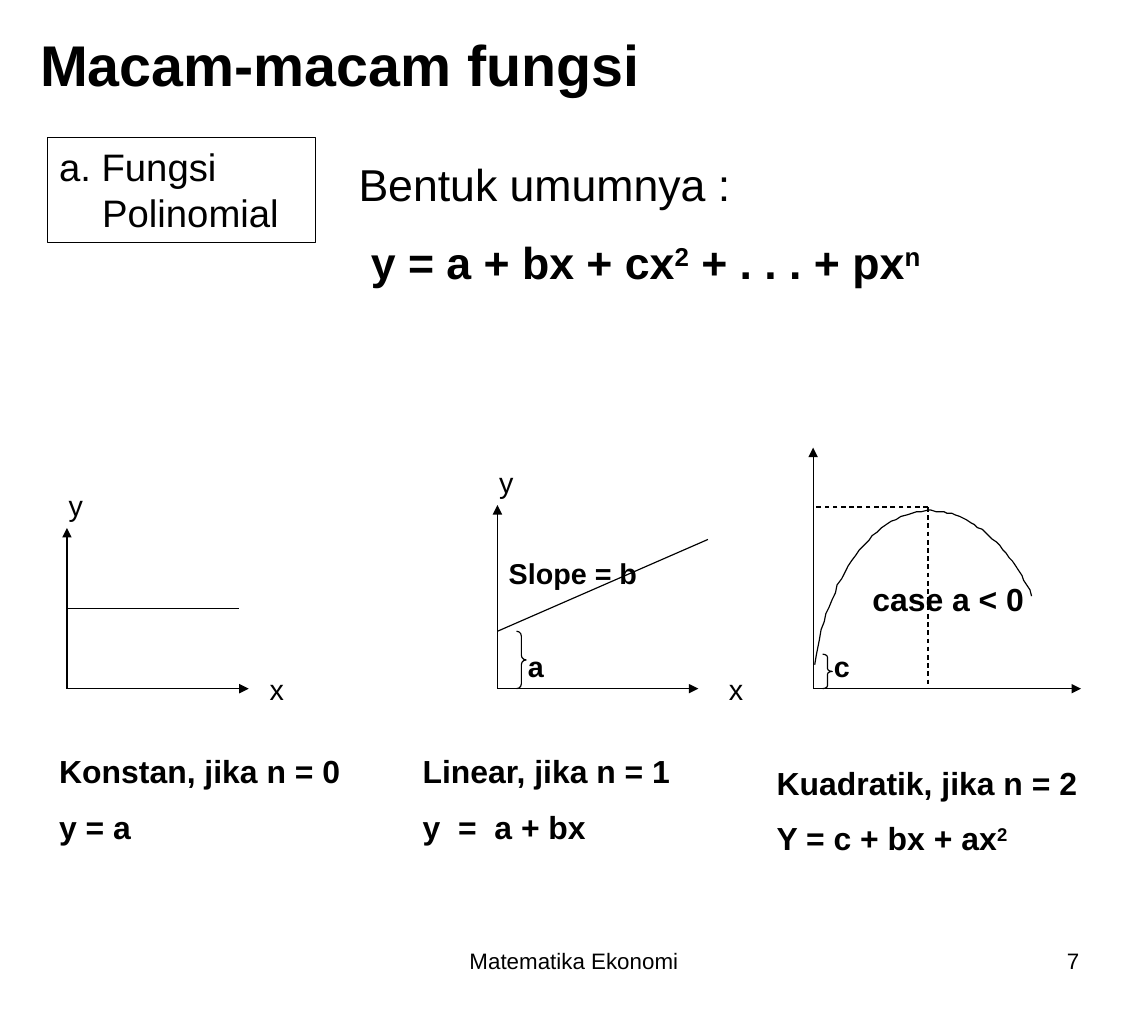
from lxml.etree import SubElement
from pptx import Presentation
from pptx.dml.color import RGBColor
from pptx.enum.dml import MSO_LINE_DASH_STYLE as Dash
from pptx.enum.shapes import MSO_CONNECTOR as Connector, MSO_SHAPE as Shape
from pptx.enum.text import MSO_ANCHOR as Anchor, MSO_AUTO_SIZE as AutoSize, PP_ALIGN as Align
from pptx.oxml.ns import qn
from pptx.util import Pt

BLACK = RGBColor(0, 0, 0)
FONT = "Arial"
BASELINE = 432
SUPERSCRIPT = "30000"


def write_text(box, paragraphs, size, bold=False, align=Align.LEFT, anchor=Anchor.TOP):
    """Fill a shape with paragraphs, in which ^ starts a one-letter superscript."""
    frame = box.text_frame
    settings = {"word_wrap": True, "auto_size": AutoSize.NONE, "vertical_anchor": anchor}
    for name, value in settings.items():
        setattr(frame, name, value)
    for index, text in enumerate(paragraphs):
        para = frame.add_paragraph() if index else frame.paragraphs[0]
        para.alignment = align
        para.space_before = Pt(round(0.55 * size, 1) if index else 0)
        first, *raised = text.split("^")
        pieces = [(first, False)]
        for part in raised:
            pieces += [(part[0], True), (part[1:], False)]
        for piece, is_raised in pieces:
            if piece:
                add_span(para, piece, size, bold, is_raised)


def add_span(para, text, size, bold, is_raised):
    """Add one run of formatted text to a paragraph."""
    span = para.add_run()
    span.text = text
    for name, value in {"name": FONT, "size": Pt(size), "bold": bold}.items():
        setattr(span.font, name, value)
    span.font.color.rgb = BLACK
    if is_raised:
        span.font._element.set("baseline", SUPERSCRIPT)


def add_label(slide, left, top, width, height, paragraphs, size, **style):
    """Add a text box and return it."""
    box = slide.shapes.add_textbox(Pt(left), Pt(top), Pt(width), Pt(height))
    write_text(box, paragraphs, size, **style)
    return box


def indent(para, left, first=0):
    """Set the left margin and first-line indent of a paragraph."""
    properties = para._p.get_or_add_pPr()
    properties.set("marL", str(Pt(left)))
    properties.set("indent", str(Pt(first)))


def outline(shape):
    """Give a shape a thin black outline without fill or shadow."""
    shape.shadow.inherit = False
    shape.fill.background()
    shape.line.color.rgb = BLACK
    shape.line.width = Pt(0.75)


def add_line(slide, start, end, arrow=False, dashed=False):
    """Draw a thin straight line, optionally dashed or with an arrowhead."""
    line = slide.shapes.add_connector(Connector.STRAIGHT, *map(Pt, start + end))
    line.line.color.rgb = BLACK
    line.line.width = Pt(0.75)
    if dashed:
        line.line.dash_style = Dash.DASH
    if arrow:
        SubElement(line.line._ln, qn("a:tailEnd"), type="triangle")
    SubElement(line._element.spPr, qn("a:effectLst"))


def add_axes(slide, left, height, width):
    """Draw a pair of arrows that meet on the common baseline."""
    origin = (left, BASELINE)
    add_line(slide, origin, (left, BASELINE - height), arrow=True)
    add_line(slide, origin, (left + width, BASELINE), arrow=True)


def add_axis_names(slide, left, height, x_left):
    """Name the y axis above its arrow and the x axis beside its arrow."""
    add_label(slide, left - 6, BASELINE - height - 29, 32, 29, ["y"], 18)
    add_label(slide, x_left, BASELINE - 14.4, 32, 29, ["x"], 18)


def add_brace(slide, left, height, adjustment):
    """Draw a right brace that stands on the baseline."""
    brace = slide.shapes.add_shape(
        Shape.RIGHT_BRACE, Pt(left), Pt(BASELINE - height), Pt(6), Pt(height))
    brace.adjustments[0] = adjustment
    outline(brace)


def bezier_points(start, control_1, control_2, end, steps=30):
    """Return evenly stepped points along a cubic curve."""
    points = []
    for step in range(steps + 1):
        t = step / steps
        weights = ((1 - t) ** 3, 3 * t * (1 - t) ** 2, 3 * t * t * (1 - t), t ** 3)
        corners = (start, control_1, control_2, end)
        points.append(tuple(
            sum(w * corner[axis] for w, corner in zip(weights, corners)) for axis in (0, 1)))
    return points


def add_parabola(slide):
    """Draw the downward-opening curve as an open outline."""
    peak = (581.8, 320.4)
    points = bezier_points((647.3, 373.7), (631.4, 339.8), (607, 319.7), peak)
    points += bezier_points(peak, (547.9, 321.8), (519.1, 360.7), (511.2, 416.9))[1:]
    builder = slide.shapes.build_freeform(*points[0], scale=Pt(1))
    builder.add_line_segments(points[1:], close=False)
    outline(builder.convert_to_shape())


def add_heading(slide):
    """Write the title, the boxed topic and the general form."""
    title = slide.shapes.title
    for name, value in {"left": 18, "top": 14.4, "width": 684, "height": 50.4}.items():
        setattr(title, name, Pt(value))
    write_text(title, ["Macam-macam fungsi"], 36, bold=True)
    topic = slide.shapes.add_shape(Shape.RECTANGLE, Pt(30), Pt(86.4), Pt(168), Pt(65.5))
    outline(topic)
    write_text(topic, ["a. Fungsi Polinomial"], 24)
    indent(topic.text_frame.paragraphs[0], 27, -27)
    form = add_label(slide, 210, 95, 432, 91.4, ["Bentuk umumnya :", "y = a + bx + cx^2 + . . . + px^n"], 28)
    for para, left in zip(form.text_frame.paragraphs, (7.8, 15.6)):
        indent(para, left)
    for span in form.text_frame.paragraphs[1].runs:
        span.font.bold = True


def add_constant(slide):
    """Draw the constant function."""
    add_axes(slide, 42, 100.8, 114)
    add_axis_names(slide, 42, 100.8, 162)
    add_line(slide, (42, 381.6), (150, 381.6))
    add_label(slide, 30, 468, 198, 67, ["Konstan, jika n = 0", "y = a"], 20, bold=True)


def add_linear(slide):
    """Draw the linear function with its slope and intercept."""
    add_axes(slide, 312, 115.2, 126)
    add_axis_names(slide, 312, 115.2, 450)
    add_line(slide, (312, 396), (444, 338.4))
    add_brace(slide, 324, 36, 0.5)
    add_label(slide, 324, 403.2, 36, 29, ["a"], 18, bold=True)
    add_label(slide, 312, 345, 102, 29, ["Slope = b"], 18, bold=True)
    add_label(slide, 258, 468, 180, 67, ["Linear, jika n = 1", "y  =  a + bx"], 20, bold=True)


def add_quadratic(slide):
    """Draw the quadratic function with its peak and intercept."""
    add_axes(slide, 510, 151.2, 168)
    add_parabola(slide)
    add_brace(slide, 516, 21.6, 0.3)
    add_label(slide, 516, 403.2, 42, 29, ["c"], 18, bold=True)
    add_label(slide, 480, 475.2, 208, 67, ["Kuadratik, jika n = 2", "Y = c + bx + ax^2"], 20, bold=True)
    add_label(slide, 540, 360, 126, 31, ["case a < 0"], 20, bold=True)
    peak = (582, 318)
    for end in ((582, BASELINE), (510, 318)):
        add_line(slide, peak, end, dashed=True)


def main():
    """Build the slide and save the deck."""
    deck = Presentation()
    deck.slide_width, deck.slide_height = Pt(720), Pt(648)
    page = deck.slides.add_slide(deck.slide_layouts[5])
    add_heading(page)
    add_constant(page)
    add_linear(page)
    add_quadratic(page)
    add_label(page, 246, 590.4, 228, 45, ["Matematika Ekonomi"], 14, align=Align.CENTER)
    add_label(page, 516, 590.4, 168, 45, ["7"], 14, align=Align.RIGHT)
    deck.save("out.pptx")


if __name__ == "__main__":
    main()
